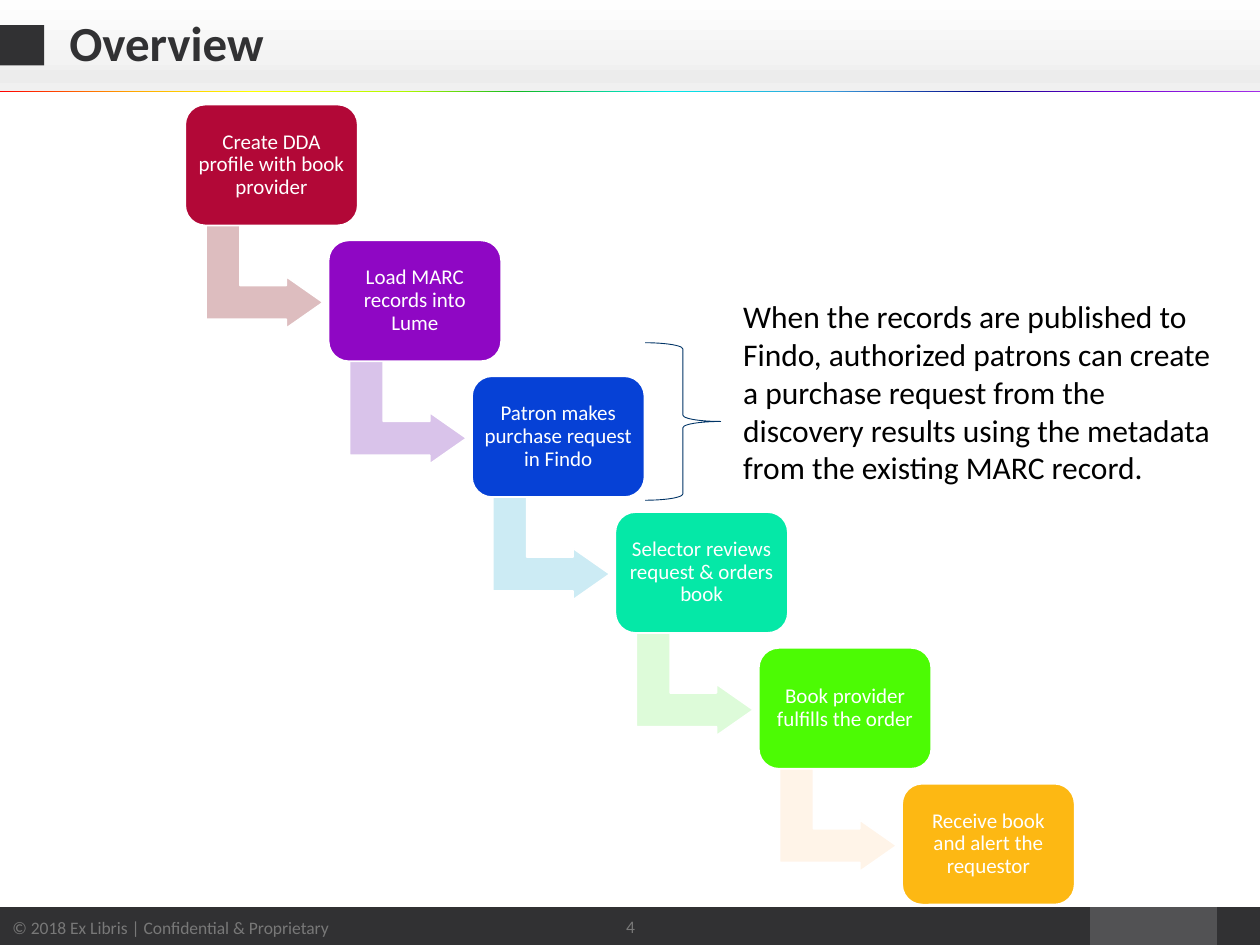
from pptx import Presentation
from pptx.dml.color import RGBColor
from pptx.enum.shapes import MSO_SHAPE as Shape
from pptx.enum.text import MSO_ANCHOR as Anchor, MSO_AUTO_SIZE as AutoSize, PP_ALIGN as Align
from pptx.oxml import parse_xml
from pptx.oxml.ns import nsdecls
from pptx.util import Inches, Pt

WHITE = RGBColor(0xFF, 0xFF, 0xFF)
BLACK = RGBColor(0x00, 0x00, 0x00)
DARK = RGBColor(0x31, 0x31, 0x33)
MID_GREY = RGBColor(0x52, 0x52, 0x54)
FOOTER_GREY = RGBColor(0x78, 0x78, 0x78)
NAVY = RGBColor(0x00, 0x34, 0x66)

HEADER_STOPS = [(0, "FEFEFE"), (66, "F3F3F3"), (83, "ECECEC"), (100, "F0F0F0")]
RAINBOW_STOPS = [
    (0, "FF0000"), (11, "FFAB00"), (20, "FFFF00"), (32, "B1F900"), (41, "11B920"),
    (53, "00E9E8"), (66, "399CDB"), (78, "000086"), (88, "7200D1"), (100, "A22DE8"),
]
STEPS = [
    ("Create DDA profile with book provider",
     RGBColor(0xB2, 0x08, 0x37), RGBColor(0xDD, 0xBD, 0xBF)),
    ("Load MARC records into Lume",
     RGBColor(0x8F, 0x07, 0xC4), RGBColor(0xD9, 0xC3, 0xEA)),
    ("Patron makes purchase request in Findo",
     RGBColor(0x06, 0x41, 0xD6), RGBColor(0xCC, 0xEB, 0xF4)),
    ("Selector reviews request & orders book",
     RGBColor(0x05, 0xE8, 0xA7), RGBColor(0xDD, 0xFB, 0xD9)),
    ("Book provider fulfills the order",
     RGBColor(0x4C, 0xFB, 0x04), RGBColor(0xFF, 0xF4, 0xE8)),
    ("Receive book and alert the requestor",
     RGBColor(0xFD, 0xB8, 0x13), None),
]

presentation = Presentation()
presentation.slide_width, presentation.slide_height = Inches(10), Inches(7.5)
slide = presentation.slides.add_slide(presentation.slide_layouts[5])


def add_shape(kind, left, top, width, height, fill=None, line=None, line_width=1):
    shape = slide.shapes.add_shape(
        kind, Inches(left), Inches(top), Inches(width), Inches(height))
    shape.shadow.inherit = False
    if isinstance(fill, list):
        stops = "".join(
            f'<a:gs pos="{position * 1000}"><a:srgbClr val="{color}"/></a:gs>'
            for position, color in fill)
        angle = 5400000 if fill is HEADER_STOPS else 0
        shape.fill.background()
        no_fill = shape.element.spPr.find("{*}noFill")
        shape.element.spPr.replace(no_fill, parse_xml(
            f'<a:gradFill {nsdecls("a")}><a:gsLst>{stops}</a:gsLst>'
            f'<a:lin ang="{angle}" scaled="0"/></a:gradFill>'))
    elif fill is None:
        shape.fill.background()
    else:
        shape.fill.solid()
        shape.fill.fore_color.rgb = fill
    if line is None:
        shape.line.fill.background()
    else:
        shape.line.color.rgb = line
        shape.line.width = Pt(line_width)
    return shape


def set_text(shape, text, size, color, align=Align.LEFT, anchor=Anchor.MIDDLE):
    frame = shape.text_frame
    frame.word_wrap = True
    frame.vertical_anchor = anchor
    paragraph = frame.paragraphs[0]
    paragraph.text = text
    paragraph.alignment = align
    paragraph.font.name = "Calibri"
    paragraph.font.size = Pt(size)
    paragraph.font.color.rgb = color
    return paragraph


add_shape(Shape.RECTANGLE, 8.65, 7.2, 1.01, 0.32, MID_GREY)
add_shape(Shape.RECTANGLE, 9.66, 7.2, 0.35, 0.32, DARK)
add_shape(Shape.RECTANGLE, 0, 0, 10, 0.72, HEADER_STOPS)
footer = add_shape(Shape.RECTANGLE, 0, 7.2, 8.65, 0.32, DARK)
set_text(footer, "© 2018 Ex Libris | Confidential & Proprietary", 10, FOOTER_GREY)
add_shape(Shape.RECTANGLE, 0, 0.2, 0.35, 0.32, DARK)
add_shape(Shape.RECTANGLE, 0, 0.72, 10, 0.01, RAINBOW_STOPS)

title = slide.shapes.title
title.left, title.top = Inches(0.45), Inches(0.02)
title.width, title.height = Inches(9.06), Inches(0.69)
heading = set_text(title, "Overview", 28, DARK)
heading.font.bold = True
heading.line_spacing = 0.9
title.text_frame.auto_size = AutoSize.NONE
slide.shapes.element.append(title.element)

page_number = slide.shapes.add_textbox(Inches(4.42), Inches(7.16), Inches(1.17), Inches(0.39))
set_text(page_number, "4", 10, FOOTER_GREY, Align.CENTER)

for index, (label, box_color, arrow_color) in enumerate(STEPS):
    left, top = 1.47 + 1.138 * index, 0.83 + 1.078 * index
    if arrow_color is not None:
        arrow = add_shape(Shape.BENT_UP_ARROW, left + 0.22, top + 0.9, 0.82, 0.93,
                          arrow_color, WHITE)
        arrow.rotation = 90
        for position, value in enumerate((0.328, 0.25, 0.358)):
            arrow.adjustments[position] = value
    box = add_shape(Shape.ROUNDED_RECTANGLE, left, top, 1.37, 0.96, box_color, WHITE)
    paragraph = set_text(box, label, 12, WHITE, Align.CENTER)
    paragraph.line_spacing = 0.9
    frame = box.text_frame
    frame.margin_left = frame.margin_right = Inches(0.05)
    frame.margin_top = frame.margin_bottom = Inches(0.05)

add_shape(Shape.RIGHT_BRACE, 5.12, 2.72, 0.6, 1.25, line=NAVY, line_width=0.5)
note = slide.shapes.add_textbox(Inches(5.8), Inches(2.31), Inches(4.06), Inches(1.92))
set_text(note, "When the records are published to Findo, authorized patrons can create "
               "a purchase request from the discovery results using the metadata from "
               "the existing MARC record.", 18, BLACK, anchor=Anchor.TOP)

presentation.save("out.pptx")
